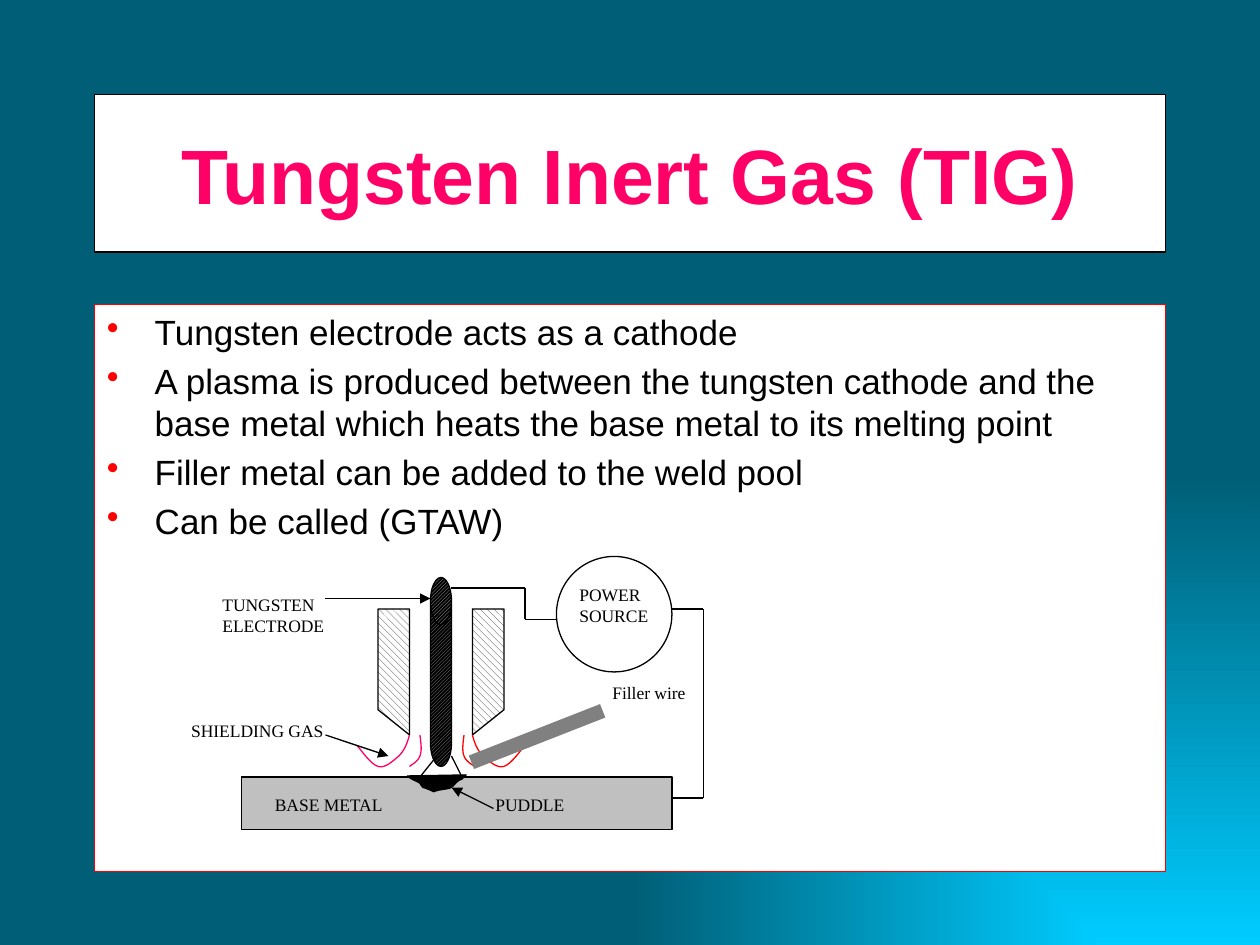
from dataclasses import dataclass
from itertools import pairwise
from typing import Optional

from lxml import etree
from pptx import Presentation
from pptx.dml.color import RGBColor
from pptx.enum import dml, shapes, text
from pptx.oxml.ns import qn
from pptx import util as u

COLUMNS, ROWS = 120, 90
CELL = u.Inches(10) // COLUMNS
CURVE_STEPS = 8
AXIS = 42

BLACK = RGBColor(0x00, 0x00, 0x00)
WHITE = RGBColor(0xFF, 0xFF, 0xFF)
RED = RGBColor(0xFF, 0x00, 0x00)
PINK = RGBColor(0xFF, 0x00, 0x66)
SILVER = RGBColor(0xC0, 0xC0, 0xC0)
GREY = RGBColor(0x80, 0x80, 0x80)
MID_GREY = RGBColor(0x96, 0x96, 0x96)
DARK_GREY = RGBColor(0x33, 0x33, 0x33)
CYAN = RGBColor(0x00, 0xCC, 0xFF)
TEAL = RGBColor(0x00, 0x5E, 0x76)

Shape = shapes.MSO_SHAPE
Align = text.PP_ALIGN
Anchor = text.MSO_ANCHOR
Pattern = dml.MSO_PATTERN
Point = tuple[float, float]


@dataclass(frozen=True)
class Hatch:
    pattern: Pattern
    fore: RGBColor
    back: RGBColor


@dataclass(frozen=True)
class Part:
    kind: Shape
    box: tuple[float, float, float, float]
    fill: RGBColor | Hatch | None = None
    line: RGBColor = BLACK
    flips: tuple[str, ...] = ()
    adjustment: Optional[float] = None


@dataclass(frozen=True)
class Label:
    words: str
    box: tuple[float, float, float, float]
    align: Align = Align.LEFT


@dataclass(frozen=True)
class Wire:
    points: tuple[Point, ...]
    color: RGBColor = BLACK
    width: float = 0.75
    arrow: bool = False


@dataclass(frozen=True)
class Curve:
    points: tuple[Point, ...]
    color: RGBColor
    filled: bool = False


BULLETS = (
    "Tungsten electrode acts as a cathode",
    "A plasma is produced between the tungsten cathode and the base metal "
    "which heats the base metal to its melting point",
    "Filler metal can be added to the weld pool",
    "Can be called (GTAW)",
)
BODY = Part(Shape.RECTANGLE, (9, 29, 102, 54), WHITE, RED)
TITLE = Part(Shape.RECTANGLE, (9, 9, 102, 15), WHITE)
NOZZLE = Hatch(Pattern.WIDE_DOWNWARD_DIAGONAL, DARK_GREY, WHITE)
ROD = Hatch(Pattern.DARK_UPWARD_DIAGONAL, MID_GREY, BLACK)
PARTS = (
    Part(Shape.RECTANGLE, (23, 74, 41, 5), SILVER),
    Part(Shape.FLOWCHART_MANUAL_INPUT, (36, 58, 3, 12), NOZZLE, flips=("flipV",)),
    Part(Shape.FLOWCHART_MANUAL_INPUT, (45, 58, 3, 12), NOZZLE, flips=("flipH", "flipV")),
    Part(Shape.CAN, (41, 55, 2, 18), ROD, adjustment=2.25),
    Part(Shape.OVAL, (53, 53, 11, 11)),
)
OUTER_GAS = ((39, 70), (38.8, 70.8), (38.5, 71.5), (38, 72), (37.4, 72.5),
             (36.7, 73.2), (36, 73), (35.3, 72.8), (34.3, 71.3), (34, 71))
INNER_GAS = ((40, 70), (40.1, 70.8), (40.2, 71.5), (40, 72), (39.8, 72.5),
             (39.4, 72.7), (39, 73))
PUDDLE = ((38.8, 73.9), (39.1, 74.2), (39.7, 74.4), (40, 74.6), (40.1, 74.8),
          (40.2, 74.9), (40.3, 75), (40.7, 75.1), (41.3, 75.4), (41.3, 75.4),
          (41.8, 75.2), (42.2, 75.2), (42.7, 75.1), (43.3, 75), (43.3, 74.4),
          (44, 74.2), (44.2, 74), (44.4, 73.8), (44.4, 73.8))
WIRES = (
    Wire(((64, 58), (67, 58), (67, 76), (64, 76))),
    Wire(((53, 59), (50, 59), (50, 56), (43, 56))),
    Wire(((41.6, 72), (40, 74))),
    Wire(((43, 72), (44, 74))),
    Wire(((31, 70), (37, 72)), arrow=True),
    Wire(((47, 77), (43, 75)), arrow=True),
    Wire(((31, 57), (41, 57)), arrow=True),
    Wire(((44.9, 72.6), (57.4, 67.7)), GREY, 8.25),
)
LABELS = (
    Label("BASE METAL", (25, 75, 18, 3.2)),
    Label("PUDDLE", (46, 75, 14, 3.2)),
    Label("POWER SOURCE", (54, 55, 9, 5.2)),
    Label("SHIELDING GAS", (15, 68, 19, 3.2), Align.CENTER),
    Label("TUNGSTEN ELECTRODE", (20, 56, 15, 5.2)),
    Label("Filler wire", (52.3, 64.4, 19, 3.2), Align.CENTER),
)


def cells(*values: float) -> list[int]:
    return [round(value * CELL) for value in values]


def mirror(points: tuple[Point, ...], axis: float) -> tuple[Point, ...]:
    return tuple((2 * axis - x, y) for x, y in points)


def paint_background(slide) -> None:
    fill = slide.background.fill
    fill.gradient()
    for stop, color in zip(fill.gradient_stops, (CYAN, TEAL)):
        stop.color.rgb = color
    gradient = slide.element.find(".//" + qn("a:gradFill"))
    gradient.remove(gradient.find(qn("a:lin")))
    focus = etree.SubElement(gradient, qn("a:path"), {"path": "rect"})
    etree.SubElement(focus, qn("a:fillToRect"), {"l": "100000", "t": "100000"})


def style(shape, fill: RGBColor | Hatch | None, line: RGBColor) -> None:
    shape.shadow.inherit = False
    shape.line.color.rgb = line
    shape.line.width = u.Pt(0.75)
    if fill is None:
        shape.fill.background()
    elif isinstance(fill, Hatch):
        shape.fill.patterned()
        shape.fill.pattern = fill.pattern
        shape.fill.fore_color.rgb = fill.fore
        shape.fill.back_color.rgb = fill.back
    else:
        shape.fill.solid()
        shape.fill.fore_color.rgb = fill


def draw_part(slide, part: Part):
    shape = slide.shapes.add_shape(part.kind, *cells(*part.box))
    style(shape, part.fill, part.line)
    for flip in part.flips:
        shape.element.spPr.xfrm.set(flip, "1")
    if part.adjustment is not None:
        shape.adjustments[0] = part.adjustment
    return shape


def draw_curve(slide, curve: Curve) -> None:
    start, *rest = curve.points
    vertices, begin = [], start
    for index in range(0, len(rest), 3):
        controls = (begin, *rest[index:index + 3])
        for step in range(1, CURVE_STEPS + 1):
            t = step / CURVE_STEPS
            weights = ((1 - t) ** 3, 3 * t * (1 - t) ** 2, 3 * t * t * (1 - t), t ** 3)
            vertices.append(cells(*(sum(w * p[i] for w, p in zip(weights, controls))
                                    for i in (0, 1))))
        begin = controls[-1]
    builder = slide.shapes.build_freeform(*cells(*start))
    builder.add_line_segments(vertices, close=curve.filled)
    style(builder.convert_to_shape(), curve.color if curve.filled else None, curve.color)


def draw_wire(slide, wire: Wire) -> None:
    for begin, end in pairwise(wire.points):
        connector = slide.shapes.add_connector(
            shapes.MSO_CONNECTOR.STRAIGHT, *cells(*begin, *end))
        connector.line.color.rgb = wire.color
        connector.line.width = u.Pt(wire.width)
        if wire.arrow:
            etree.SubElement(connector.line._get_or_add_ln(), qn("a:tailEnd"), {"type": "triangle"})
        etree.SubElement(connector.element.spPr, qn("a:effectLst"))


def write(shape, *lines: str, size: float, font: str, color: RGBColor = BLACK,
          bold: bool = False, align: Align = Align.LEFT, anchor: Anchor = Anchor.TOP,
          bullet: Optional[RGBColor] = None) -> None:
    frame = shape.text_frame
    frame.word_wrap = True
    frame.vertical_anchor = anchor
    frame.text = "\n".join(lines)
    for paragraph in frame.paragraphs:
        paragraph.alignment = align
        for run in paragraph.runs:
            run.font.size, run.font.name, run.font.bold = u.Pt(size), font, bold
            run.font.color.rgb = color
        if bullet is not None:
            paragraph.space_before = u.Pt(size * 0.2)
            properties = paragraph._p.get_or_add_pPr()
            indent = u.Inches(0.38)
            properties.set("marL", str(indent))
            properties.set("indent", str(-indent))
            tint = etree.SubElement(properties, qn("a:buClr"))
            etree.SubElement(tint, qn("a:srgbClr"), {"val": str(bullet)})
            etree.SubElement(properties, qn("a:buChar"), {"char": "•"})


def main() -> None:
    presentation = Presentation()
    presentation.slide_width, presentation.slide_height = cells(COLUMNS, ROWS)
    slide = presentation.slides.add_slide(presentation.slide_layouts[6])
    paint_background(slide)
    write(draw_part(slide, BODY), *BULLETS, size=20, font="Arial", bullet=RED)
    write(draw_part(slide, TITLE), "Tungsten Inert Gas (TIG)", size=44, font="Arial",
          color=PINK, bold=True, align=Align.CENTER, anchor=Anchor.MIDDLE)
    for part in PARTS:
        draw_part(slide, part)
    for gas, axis in ((OUTER_GAS, AXIS), (INNER_GAS, AXIS + 0.1)):
        draw_curve(slide, Curve(gas, PINK))
        draw_curve(slide, Curve(mirror(gas, axis), RED))
    draw_curve(slide, Curve(PUDDLE, BLACK, filled=True))
    for wire in WIRES:
        draw_wire(slide, wire)
    for label in LABELS:
        write(slide.shapes.add_textbox(*cells(*label.box)), label.words,
              size=10, font="Times New Roman", align=label.align)
    presentation.save("out.pptx")


if __name__ == "__main__":
    main()
